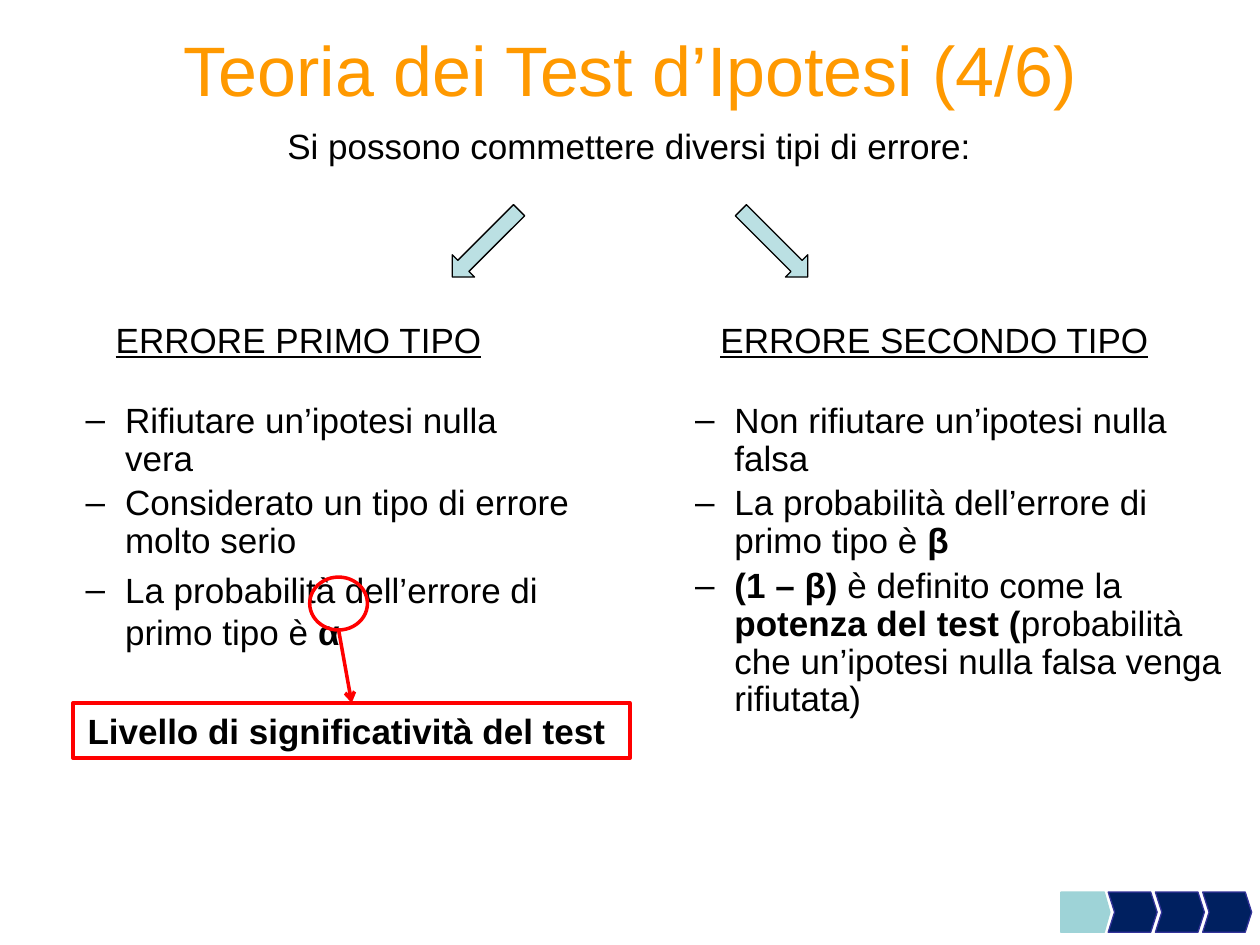
from lxml import etree
from pptx import Presentation
from pptx.dml.color import RGBColor
from pptx.enum import shapes, text
from pptx.oxml.ns import qn
from pptx.util import Pt

COLORS = {"title": "FF9900", "text": "000000", "arrow": "BBE0E3", "mark": "FF0000",
          "step": "002060", "step_edge": "333399", "current": "9ED3D7"}
FONT = "Arial"

TITLE = "Teoria dei Test d’Ipotesi (4/6)"
INTRO = "Si possono commettere diversi tipi di errore:"
LEVEL = "Livello di significatività del test "

# Each bullet is a list of (wording, bold) runs
ERRORS = [
    {"heading": "ERRORE PRIMO TIPO",
     "frame": (5.75, 183, 329.75, 303),
     "bullets": [
         (0.9, [("Rifiutare un’ipotesi nulla vera", False)]),
         (0.9, [("Considerato un tipo di errore molto serio", False)]),
         (1.0, [("La probabilità dell’errore di primo tipo è ", False), ("α", True)]),
     ]},
    {"heading": "ERRORE SECONDO TIPO",
     "frame": (354, 183, 360, 303),
     "bullets": [
         (0.9, [("Non rifiutare un’ipotesi nulla falsa", False)]),
         (0.9, [("La probabilità dell’errore di primo tipo è ", False), ("β", True)]),
         (0.9, [("(1 – β) ", True), ("è definito come la ", False),
                ("potenza del test (", True),
                ("probabilità che un’ipotesi nulla falsa venga rifiutata)", False)]),
     ]},
]
ARROWS = [(268.5, 45), (433.5, 315)]  # left, rotation
STEPS, STEP_LEFT, STEP_PITCH = 4, 606.25, 27


def rgb(name):
    return RGBColor.from_string(COLORS[name])


def place(shape, left, top, width, height):
    shape.left, shape.top, shape.width, shape.height = map(Pt, (left, top, width, height))


def add_run(paragraph, wording, size=20, color="text", bold=False, underline=False):
    run = paragraph.add_run()
    run.text = wording
    font = run.font
    font.name, font.size, font.bold, font.underline = FONT, Pt(size), bold, underline
    font.color.rgb = rgb(color)


def set_bullet(paragraph, char=None, margin=0.0, indent=0.0):
    props = paragraph._p.get_or_add_pPr()
    props.set("marL", str(Pt(margin)))
    props.set("indent", str(Pt(indent)))
    if char:
        etree.SubElement(props, qn("a:buChar")).set("char", char)
    else:
        etree.SubElement(props, qn("a:buNone"))


def space(paragraph, before, lines=1.0):
    paragraph.space_before, paragraph.line_spacing = Pt(before), lines


def add_preset(slide, kind, frame, edge, weight, fill=None):
    shape = slide.shapes.add_shape(kind, *map(Pt, frame))
    shape.shadow.inherit = False
    if fill:
        shape.fill.solid()
        shape.fill.fore_color.rgb = rgb(fill)
    else:
        shape.fill.background()
    shape.line.color.rgb = rgb(edge)
    shape.line.width = Pt(weight)
    return shape


def fill_column(body, error):
    place(body, *error["frame"])
    frame = body.text_frame
    frame.auto_size = text.MSO_AUTO_SIZE.NONE
    heading = frame.paragraphs[0]
    heading.alignment = text.PP_ALIGN.CENTER
    space(heading, 4, 0.8)
    set_bullet(heading)
    add_run(heading, error["heading"], underline=True)
    for index, (lines, runs) in enumerate(error["bullets"]):
        bullet = frame.add_paragraph()
        bullet.level = 1
        space(bullet, 4 if index else 24.5, lines)
        set_bullet(bullet, "–", 58.5, -22.5)
        for wording, bold in runs:
            add_run(bullet, wording, bold=bold)


def add_level_callout(slide):
    """Circle the alpha and point from it to the boxed name of the level."""
    preset = shapes.MSO_SHAPE
    add_preset(slide, preset.OVAL, (177, 329.75, 33, 30.25), "mark", 2)
    box = add_preset(slide, preset.RECTANGLE, (41.75, 401.75, 318.25, 31.5), "mark", 2)
    box.text_frame.word_wrap = True
    box.text_frame.vertical_anchor = text.MSO_ANCHOR.MIDDLE
    label = box.text_frame.paragraphs[0]
    label.alignment = text.PP_ALIGN.CENTER
    add_run(label, LEVEL, bold=True)

    pointer = slide.shapes.add_connector(
        shapes.MSO_CONNECTOR.STRAIGHT, Pt(193.5), Pt(360), Pt(201), Pt(401.75))
    pointer.line.color.rgb = rgb("mark")
    pointer.line.width = Pt(2)
    etree.SubElement(pointer.line._get_or_add_ln(), qn("a:tailEnd")).set("type", "arrow")
    etree.SubElement(pointer._element.spPr, qn("a:effectLst"))


def add_progress(slide):
    for step in range(STEPS):
        frame = (STEP_LEFT + step * STEP_PITCH, 509.75, 28, 23)
        if step == 0:
            marker = add_preset(slide, shapes.MSO_SHAPE.PENTAGON, frame,
                                "current", 0.75, "current")
            marker.adjustments[0] = 0.14
        else:
            marker = add_preset(slide, shapes.MSO_SHAPE.CHEVRON, frame,
                                "step_edge", 0.75, "step")
            marker.adjustments[0] = 0.16


def main():
    deck = Presentation()
    deck.slide_width, deck.slide_height = Pt(720), Pt(540)
    slide = deck.slides.add_slide(deck.slide_layouts[3])
    title, *columns = slide.placeholders

    place(title, 0, -5.75, 720, 90)
    title.text_frame.auto_size = text.MSO_AUTO_SIZE.NONE
    title.text_frame.vertical_anchor = text.MSO_ANCHOR.MIDDLE
    heading = title.text_frame.paragraphs[0]
    heading.alignment = text.PP_ALIGN.CENTER
    add_run(heading, TITLE, 40, "title")

    intro = slide.shapes.add_textbox(Pt(5.75), Pt(72), Pt(707.75), Pt(41.75))
    intro.text_frame.word_wrap = True
    sentence = intro.text_frame.paragraphs[0]
    sentence.alignment = text.PP_ALIGN.CENTER
    space(sentence, 4, 0.8)
    add_run(sentence, INTRO)

    for left, rotation in ARROWS:
        arrow = add_preset(slide, shapes.MSO_SHAPE.DOWN_ARROW,
                           (left, 112.25, 18, 54), "text", 0.75, "arrow")
        arrow.rotation = rotation
    for body, error in zip(columns, ERRORS):
        fill_column(body, error)
    add_level_callout(slide)
    add_progress(slide)
    # The layout's date, footer and number are not carried onto the slide
    deck.save("out.pptx")


if __name__ == "__main__":
    main()
